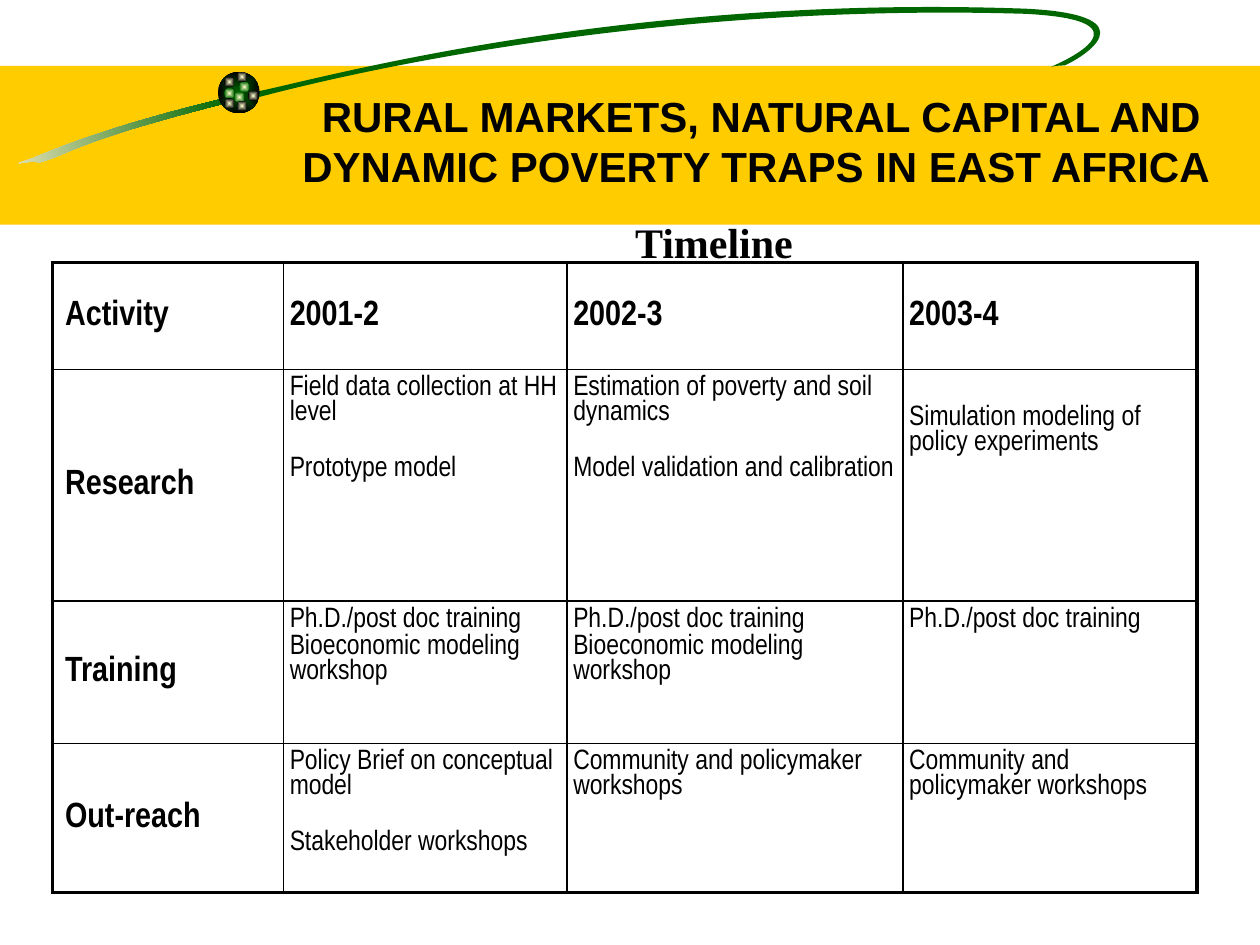
import math
from dataclasses import dataclass

from lxml import etree
from pptx import Presentation
from pptx import util as u
from pptx.dml.color import RGBColor
from pptx.enum import shapes, text
from pptx.oxml import ns

Pt = u.Pt
BLACK = RGBColor(0x00, 0x00, 0x00)
GREEN = RGBColor(0x00, 0x66, 0x00)
GOLD = RGBColor(0xFF, 0xCC, 0x00)
CREAM = RGBColor(0xFF, 0xFF, 0xCC)
SAND = RGBColor(0xF5, 0xEB, 0xC1)

LABEL = {"name": "Arial Narrow", "size": Pt(20), "bold": True}
BODY = {"name": "Arial Narrow", "size": Pt(16), "bold": False}
BODY_GAP = 1.2
BLANK_GAP = 17.4
OUTER, INNER = 2.25, 1
TILT = 8.5


@dataclass
class Disc:
    x: float
    y: float
    size: float
    centre: RGBColor
    rim: RGBColor


@dataclass
class Curve:
    frame: tuple
    start: tuple
    segments: list


@dataclass
class Heading:
    x: float
    y: float
    w: float
    h: float
    lines: list
    font: str


@dataclass
class Entry:
    lines: list
    gap: float = BODY_GAP
    top: float = 3.6


DISCS = [Disc(124.6, 41, 23.8, GREEN, BLACK)] + [
    Disc(x, y, 5.8, CREAM, rim) for x, y, rim in [
        (136.8, 46.8, GREEN), (128.2, 43.9, BLACK), (128.2, 50.4, GREEN),
        (133.9, 52.6, GREEN), (141.8, 51.8, BLACK), (135.4, 57.6, BLACK),
        (128.2, 56.2, BLACK), (135.4, 41, BLACK)]]

TAIL = Curve((-2.2, 65.5, 132.5, 21.6), (128.2, 56.2), [
    ((65.5, 71.3), (35.3, 83.5), (18, 90.7)),
    ((0.7, 96.5), (18.7, 90.7), (22.3, 92.9)),
    ((41, 87.8), (41, 81.4), (128.9, 59)),
    ((128.9, 59), (128.2, 56.2), (128.2, 56.2)),
])
SWOOSH = Curve((144.7, -10.8, 515.5, 78.5), (145.4, 52.6), [
    ((177.1, 46.8), (349.9, -3.6), (586.1, 5)),
    ((660.2, 8.6), (617, 33.8), (608.4, 37.4)),
    ((608.4, 37.4), (603.4, 37.4), (600.5, 38.2)),
    ((607.7, 35.3), (660.2, 11.5), (585.4, 7.9)),
    ((394.6, 2.2), (230.4, 33.8), (148.3, 55.4)),
    ((148.3, 55.4), (145.4, 52.6), (145.4, 52.6)),
])

HEADINGS = [
    Heading(150, 48.2, 570, 103,
            ["RURAL MARKETS, NATURAL CAPITAL AND",
             "DYNAMIC POVERTY TRAPS IN EAST AFRICA "], "Arial"),
    Heading(180, 120.2, 456, 79.2, ["Timeline"], "Times New Roman"),
]

COLS = [132, 162, 192, 168]
ROWS = [61.2, 132.2, 81.6, 85]
TRAINING = Entry(["Ph.D./post doc training", "Bioeconomic modeling workshop"])
WORKSHOPS = Entry(["Community and policymaker workshops"])
TABLE = [
    ["Activity", "2001-2", "2002-3", "2003-4"],
    ["Research",
     Entry(["Field data collection at HH level", "Prototype model"], BLANK_GAP),
     Entry(["Estimation of poverty and soil dynamics",
            "Model validation and calibration"], BLANK_GAP),
     Entry(["Simulation modeling of policy experiments"], top=20.6)],
    ["Training", TRAINING, TRAINING, Entry(["Ph.D./post doc training"])],
    ["Out-reach",
     Entry(["Policy Brief on conceptual model", "Stakeholder workshops"], BLANK_GAP),
     WORKSHOPS, WORKSHOPS],
]


def finish(sp) -> None:
    sp.line.fill.background()
    sp.shadow.inherit = False


def set_gradient(sp, first: RGBColor, last: RGBColor, radial: bool = False) -> None:
    sp.fill.gradient()
    for stop, color, pos in zip(sp.fill.gradient_stops, (first, last), (0, 1)):
        stop.color.rgb = color
        stop.position = pos
    if not radial:
        sp.fill.gradient_angle = 0
        return
    grad = sp._element.spPr.find(ns.qn("a:gradFill"))
    grad.remove(grad.find(ns.qn("a:lin")))
    shade = etree.SubElement(grad, ns.qn("a:path"), {"path": "shape"})
    etree.SubElement(shade, ns.qn("a:fillToRect"), dict.fromkeys("ltrb", "50000"))


def add_band(s) -> None:
    sp = s.shapes.add_shape(shapes.MSO_SHAPE.RECTANGLE, 0, Pt(37.6), Pt(720), Pt(90.8))
    sp.fill.solid()
    sp.fill.fore_color.rgb = GOLD
    finish(sp)


def add_disc(s, d: Disc) -> None:
    sp = s.shapes.add_shape(shapes.MSO_SHAPE.OVAL, Pt(d.x), Pt(d.y), Pt(d.size), Pt(d.size))
    set_gradient(sp, d.centre, d.rim, radial=True)
    finish(sp)


def level(point: tuple, frame: tuple) -> tuple:
    x, y, w, h = frame
    dx, dy = point[0] - x - w / 2, point[1] - y - h / 2
    cos, sin = math.cos(math.radians(TILT)), math.sin(math.radians(TILT))
    return Pt(w / 2 + dx * cos - dy * sin), Pt(h / 2 + dx * sin + dy * cos)


def add_curve(s, c: Curve):
    start = level(c.start, c.frame)
    segments = [[level(q, c.frame) for q in seg] for seg in c.segments]
    builder = s.shapes.build_freeform(*start)
    builder.add_line_segments([seg[-1] for seg in segments], close=True)
    sp = builder.convert_to_shape()
    sp.left, sp.top, sp.width, sp.height = map(Pt, c.frame)
    sp.rotation = 360 - TILT
    outline = sp._element.spPr.find(".//" + ns.qn("a:path"))
    for child in list(outline):
        outline.remove(child)
    outline.set("w", str(sp.width))
    outline.set("h", str(sp.height))
    for tag, points in [("moveTo", [start])] + [("cubicBezTo", seg) for seg in segments]:
        step = etree.SubElement(outline, ns.qn(f"a:{tag}"))
        for x, y in points:
            etree.SubElement(step, ns.qn("a:pt"), {"x": str(int(x)), "y": str(int(y))})
    etree.SubElement(outline, ns.qn("a:close"))
    finish(sp)
    return sp


def write(tf, lines: list, font: dict, **para) -> None:
    gap = para.pop("gap", 0)
    for i, line in enumerate(lines):
        p = tf.add_paragraph() if i else tf.paragraphs[0]
        for key, value in para.items():
            setattr(p, key, value)
        p.space_before = Pt(gap if i else 0)
        r = p.add_run()
        r.text = line
        for key, value in font.items():
            setattr(r.font, key, value)
        r.font.color.rgb = BLACK


def add_heading(s, h: Heading) -> None:
    tf = s.shapes.add_textbox(Pt(h.x), Pt(h.y), Pt(h.w), Pt(h.h)).text_frame
    tf.word_wrap = True
    write(tf, h.lines, {"name": h.font, "size": Pt(24), "bold": True},
          alignment=text.PP_ALIGN.CENTER)


def set_borders(cell, widths: dict) -> None:
    tc_pr = cell._tc.get_or_add_tcPr()
    for side, width in widths.items():
        ln = etree.SubElement(tc_pr, ns.qn(f"a:ln{side}"), {"w": str(Pt(width))})
        fill = etree.SubElement(ln, ns.qn("a:solidFill"))
        etree.SubElement(fill, ns.qn("a:srgbClr"), {"val": str(BLACK)})


def add_timeline(s) -> None:
    table = s.shapes.add_table(len(ROWS), len(COLS), Pt(30), Pt(150),
                               Pt(sum(COLS)), Pt(sum(ROWS))).table
    table.first_row = table.horz_banding = False
    for col, width in zip(table.columns, COLS):
        col.width = Pt(width)
    for row, height in zip(table.rows, ROWS):
        row.height = Pt(height)
    for i, entries in enumerate(TABLE):
        for j, entry in enumerate(entries):
            cell = table.cell(i, j)
            edges = {"L": j == 0, "R": j == len(COLS) - 1,
                     "T": i == 0, "B": i == len(ROWS) - 1}
            set_borders(cell, {k: OUTER if v else INNER for k, v in edges.items()})
            cell.fill.background()
            cell.margin_left = cell.margin_right = Pt(3.6 if j else 7.2)
            if isinstance(entry, Entry):
                cell.margin_top = Pt(entry.top)
                write(cell.text_frame, entry.lines, BODY, gap=entry.gap, line_spacing=0.95)
            else:
                cell.vertical_anchor = text.MSO_ANCHOR.MIDDLE
                write(cell.text_frame, [entry], LABEL)


def main() -> None:
    prs = Presentation()
    prs.slide_width, prs.slide_height = Pt(720), Pt(540)
    s = prs.slides.add_slide(prs.slide_layouts[6])
    add_band(s)
    set_gradient(add_curve(s, TAIL), SAND, GREEN)
    swoosh = add_curve(s, SWOOSH)
    swoosh.fill.solid()
    swoosh.fill.fore_color.rgb = GREEN
    for d in DISCS:
        add_disc(s, d)
    for h in HEADINGS:
        add_heading(s, h)
    add_timeline(s)
    prs.save("out.pptx")


if __name__ == "__main__":
    main()
